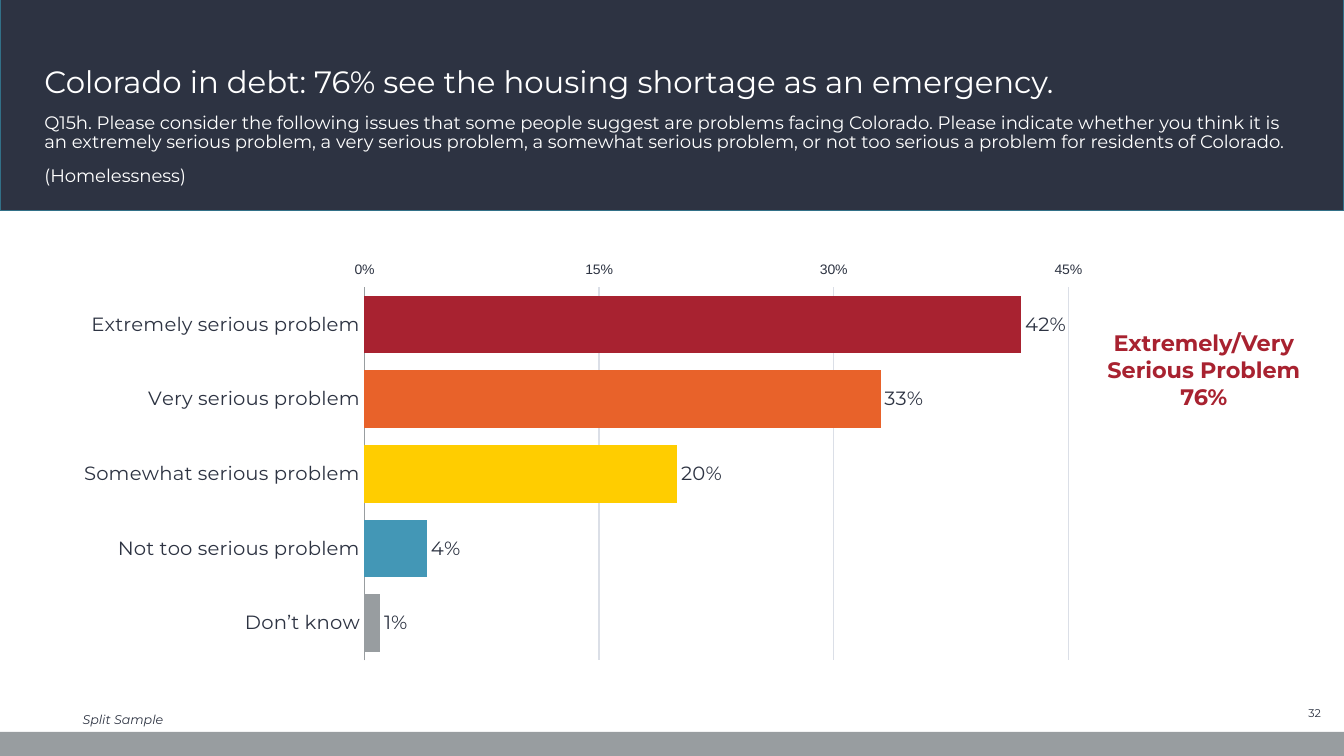
from dataclasses import dataclass
from typing import Optional

from lxml.etree import SubElement
from pptx import Presentation
from pptx.chart.data import CategoryChartData
from pptx.dml.color import RGBColor
from pptx.enum.chart import (XL_AXIS_CROSSES, XL_CHART_TYPE, XL_LABEL_POSITION,
                             XL_TICK_MARK)
from pptx.enum.shapes import MSO_SHAPE
from pptx.enum.text import MSO_ANCHOR, MSO_AUTO_SIZE, PP_ALIGN
from pptx.oxml import parse_xml
from pptx.oxml.ns import nsdecls, qn
from pptx.util import Emu, Pt

EMU_PER_PX = 9144  # 100 px to the inch


def px(length: int) -> Emu:
    return Emu(length * EMU_PER_PX)


@dataclass(frozen=True)
class Theme:
    navy: str = "2D3342"
    white: str = "FFFFFF"
    teal: str = "327087"
    red: str = "A82230"
    orange: str = "E8622A"
    yellow: str = "FFCD00"
    blue: str = "4397B6"
    gray: str = "989DA0"
    grid: str = "DBDFE7"
    font: str = "Montserrat"
    axis_font: str = "Arial"
    title_size: float = 22
    question_size: float = 12.9
    callout_size: float = 16
    label_size: float = 14
    axis_size: float = 10
    note_size: float = 9
    number_size: float = 8


THEME = Theme()


@dataclass(frozen=True)
class Box:
    left: int
    top: int
    width: int
    height: int

    def emu(self) -> tuple:
        return px(self.left), px(self.top), px(self.width), px(self.height)


@dataclass(frozen=True)
class Band:
    box: Box
    fill: str
    line: Optional[str] = None


@dataclass(frozen=True)
class TextBlock:
    box: Box
    text: str
    size: float
    color: str
    align: PP_ALIGN = PP_ALIGN.LEFT
    anchor: MSO_ANCHOR = MSO_ANCHOR.TOP
    bold: bool = False
    italic: bool = False
    spacing: float = 1.0
    auto_size: MSO_AUTO_SIZE = MSO_AUTO_SIZE.NONE


@dataclass(frozen=True)
class Answer:
    label: str
    share: float
    color: str


BANDS = [
    Band(Box(0, -3, 1333, 212), THEME.navy, THEME.teal),
    Band(Box(0, 726, 1333, 24), THEME.gray),
]
TITLE = TextBlock(
    Box(34, 7, 1264, 97),
    "Colorado in debt: 76% see the housing shortage as an emergency.",
    THEME.title_size, THEME.white, anchor=MSO_ANCHOR.BOTTOM, spacing=0.9)
QUESTION = TextBlock(
    Box(34, 108, 1264, 92),
    "Q15h. Please consider the following issues that some people suggest are "
    "problems facing Colorado. Please indicate whether you think it is an "
    "extremely serious problem, a very serious problem, a somewhat serious "
    "problem, or not too serious a problem for residents of Colorado.\n"
    "(Homelessness)",
    THEME.question_size, THEME.white, spacing=0.9)
LABELS = [
    TextBlock(Box(72, 695, 1169, 31), "Split Sample", THEME.note_size, THEME.navy,
              anchor=MSO_ANCHOR.BOTTOM, italic=True, spacing=0.9),
    TextBlock(Box(1242, 695, 78, 24), "32", THEME.number_size, THEME.navy,
              align=PP_ALIGN.RIGHT, anchor=MSO_ANCHOR.MIDDLE),
    TextBlock(Box(1088, 322, 212, 91), "Extremely/Very Serious Problem\v76%",
              THEME.callout_size, THEME.red, align=PP_ALIGN.CENTER, bold=True,
              auto_size=MSO_AUTO_SIZE.SHAPE_TO_FIT_TEXT),
]
CHART_BOX = Box(50, 260, 1074, 420)
ANSWERS = [
    Answer("Extremely serious problem", 0.42, THEME.red),
    Answer("Very serious problem", 0.33, THEME.orange),
    Answer("Somewhat serious problem", 0.20, THEME.yellow),
    Answer("Not too serious problem", 0.04, THEME.blue),
    Answer("Don’t know", 0.01, THEME.gray),
]
PLOT_AREA = {"x": 0.29, "y": 0.04, "w": 0.65, "h": 0.9}


def style_font(font, size: float, color: str, name: str = THEME.font) -> None:
    font.name = name
    font.size = Pt(size)
    font.color.rgb = RGBColor.from_string(color)


def add_band(slide, band: Band, depth: int) -> None:
    shape = slide.shapes.add_shape(MSO_SHAPE.RECTANGLE, *band.box.emu())
    shape.shadow.inherit = False
    shape.fill.solid()
    shape.fill.fore_color.rgb = RGBColor.from_string(band.fill)
    if band.line:
        shape.line.color.rgb = RGBColor.from_string(band.line)
        shape.line.width = Pt(1)
    else:
        shape.line.fill.background()
    # Bands lie behind the placeholders
    slide.shapes.element.insert(2 + depth, shape.element)


def write_text(shape, block: TextBlock) -> None:
    shape.left, shape.top, shape.width, shape.height = block.box.emu()
    frame = shape.text_frame
    frame.word_wrap = True
    frame.auto_size = block.auto_size
    frame.vertical_anchor = block.anchor
    frame.text = block.text
    for index, paragraph in enumerate(frame.paragraphs):
        paragraph.alignment = block.align
        paragraph.line_spacing = block.spacing
        paragraph.space_before = Pt(10 if index else 0)
        if shape.is_placeholder:
            properties = paragraph._p.get_or_add_pPr()
            properties.set("marL", "0")
            properties.set("indent", "0")
            SubElement(properties, qn("a:buNone"))
        for run in paragraph.runs:
            style_font(run.font, block.size, block.color)
            run.font.bold = block.bold
            run.font.italic = block.italic


def add_answer_chart(slide) -> None:
    data = CategoryChartData(number_format="0%")
    data.categories = [answer.label for answer in ANSWERS]
    data.add_series("Series 1", [answer.share for answer in ANSWERS])
    chart = slide.shapes.add_chart(
        XL_CHART_TYPE.BAR_CLUSTERED, *CHART_BOX.emu(), data).chart
    chart.has_legend = False
    chart.has_title = False
    style_font(chart.font, THEME.axis_size, THEME.navy)

    # Bars and value labels
    plot = chart.plots[0]
    plot.gap_width = 30
    plot.vary_by_categories = False
    series = plot.series[0]
    series.format.fill.solid()
    series.format.fill.fore_color.rgb = RGBColor.from_string(THEME.blue)
    for index, answer in enumerate(ANSWERS):
        fill = series.points[index].format.fill
        fill.solid()
        fill.fore_color.rgb = RGBColor.from_string(answer.color)
    labels = series.data_labels
    labels.show_value = True
    labels.number_format = "0%"
    labels.number_format_is_linked = False
    labels.position = XL_LABEL_POSITION.OUTSIDE_END
    style_font(labels.font, THEME.label_size, THEME.navy)

    # Axes
    categories = chart.category_axis
    categories.reverse_order = True
    categories.crosses = XL_AXIS_CROSSES.MAXIMUM
    categories.major_tick_mark = XL_TICK_MARK.NONE
    categories.format.line.color.rgb = RGBColor.from_string(THEME.gray)
    style_font(categories.tick_labels.font, THEME.label_size, THEME.navy)
    values = chart.value_axis
    values.minimum_scale, values.maximum_scale, values.major_unit = 0, 0.45, 0.15
    values.major_tick_mark = XL_TICK_MARK.OUTSIDE
    values.format.line.fill.background()
    values.major_gridlines.format.line.color.rgb = RGBColor.from_string(THEME.grid)
    values.major_gridlines.format.line.width = Pt(0.75)
    values.tick_labels.number_format = "0%"
    values.tick_labels.number_format_is_linked = False
    style_font(values.tick_labels.font, THEME.axis_size, THEME.navy, THEME.axis_font)

    # Fixed inner plot area
    sizes = "".join(f'<c:{key} val="{share}"/>' for key, share in PLOT_AREA.items())
    layout = parse_xml(
        f'<c:layout {nsdecls("c")}><c:manualLayout><c:layoutTarget val="inner"/>'
        f'<c:xMode val="edge"/><c:yMode val="edge"/>{sizes}'
        "</c:manualLayout></c:layout>")
    plot_area = chart._chartSpace.chart.plotArea
    for automatic in plot_area.findall(qn("c:layout")):
        plot_area.remove(automatic)
    plot_area.insert(0, layout)


def main() -> None:
    presentation = Presentation()
    presentation.slide_width, presentation.slide_height = px(1333), px(750)
    slide = presentation.slides.add_slide(presentation.slide_layouts[1])
    for depth, band in enumerate(BANDS):
        add_band(slide, band, depth)
    write_text(slide.shapes.title, TITLE)
    write_text(slide.placeholders[1], QUESTION)
    add_answer_chart(slide)
    for label in LABELS:
        write_text(slide.shapes.add_textbox(*label.box.emu()), label)
    presentation.save("out.pptx")


if __name__ == "__main__":
    main()
